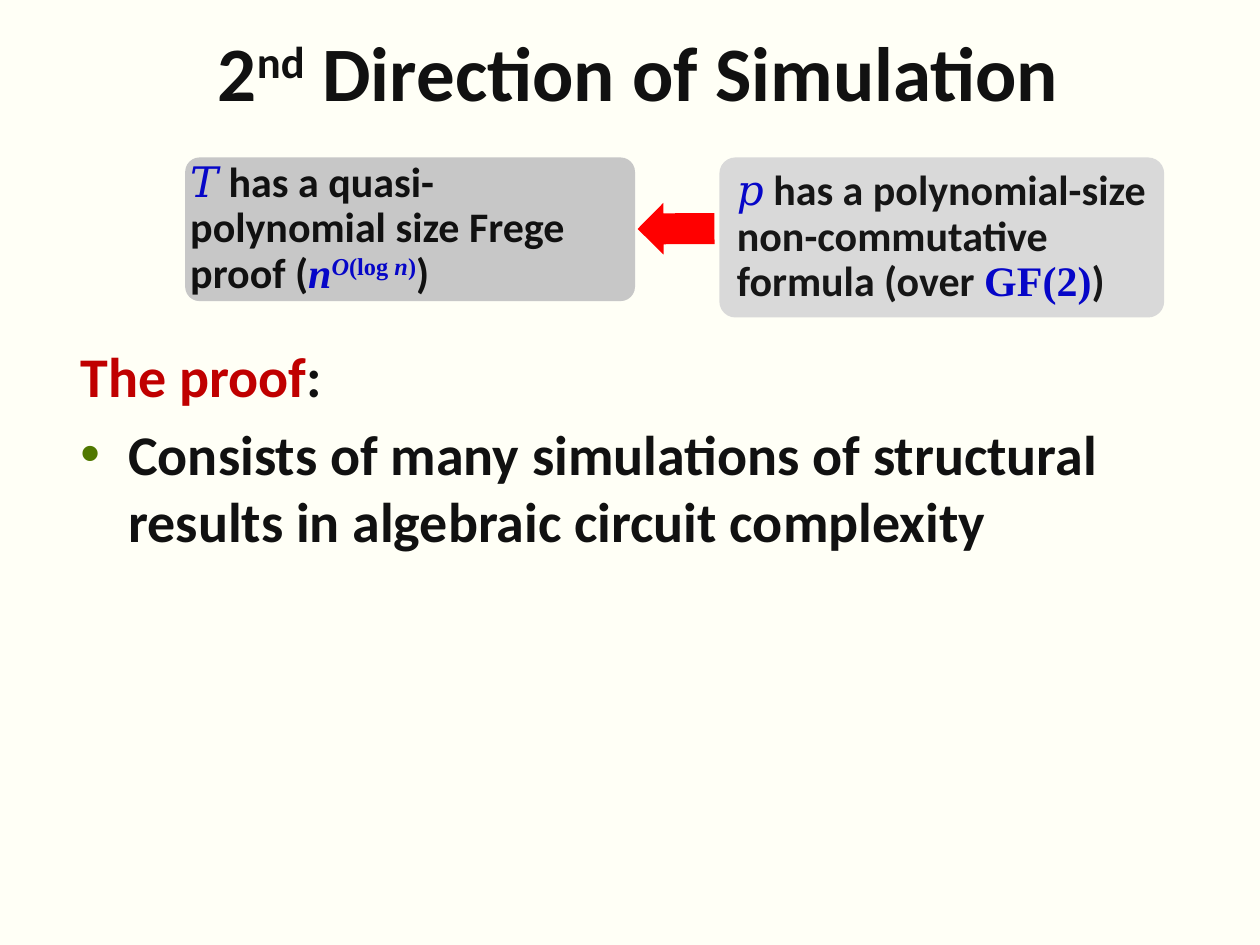
import pptx
import pptx.util
import pptx.dml.color
import pptx.enum.shapes
import pptx.enum.text
from lxml import etree

Inches = pptx.util.Inches
Pt = pptx.util.Pt
SHAPE = pptx.enum.shapes.MSO_SHAPE
ALIGN = pptx.enum.text.PP_ALIGN
ANCHOR = pptx.enum.text.MSO_ANCHOR

SANS, SERIF = "Calibri", "Times New Roman"
INK, BLUE, RED, SOFT = "111111", "0606C8", "C00000", "161616"

TITLE = [("2", SANS, INK, ""), ("nd", SANS, INK, "^"),
         (" Direction of Simulation", SANS, INK, "")]
PROOF = [("The proof", SANS, RED, ""), (":", SANS, INK, "")]
POINT = [("Consists of many simulations of structural results in "
          "algebraic circuit complexity", SANS, INK, "")]
FREGE = [("𝑇 ", SERIF, BLUE, ""),
         ("has a quasi-polynomial size Frege proof (", SANS, INK, ""),
         ("n", SERIF, BLUE, "i"), ("O", SERIF, BLUE, "i^"),
         ("(log", SERIF, BLUE, "^"), (" n", SERIF, BLUE, "i^"),
         (")", SERIF, BLUE, "^"), (")", SANS, INK, "")]
FORM = [("𝑝", SERIF, BLUE, ""),
        (" has a polynomial-size non-commutative formula (over ", SANS, SOFT, ""),
        ("GF(2)", SERIF, BLUE, ""), (")", SANS, SOFT, "")]
CARDS = [((1.47, 1.25, 3.57, 1.14), "C7C7C7", FREGE, 0),
         ((5.71, 1.25, 3.53, 1.27), "D9D9D9", FORM, 0.1)]
EDGE = 0.04


def color(code):
    return pptx.dml.color.RGBColor.from_string(code)


def write(para, runs, size):
    for text, face, code, style in runs:
        run = para.add_run()
        run.text = text
        font = run.font
        font.name, font.size, font.bold = face, Pt(size), True
        font.italic = "i" in style
        font.color.rgb = color(code)
        if "^" in style:
            run._r.get_or_add_rPr().set("baseline", "30000")


def add_text(slide, at, anchor, pad=(0.1, 0.05)):
    frame = slide.shapes.add_textbox(*map(Inches, at)).text_frame
    frame.word_wrap = True
    frame.vertical_anchor = anchor
    frame.margin_left = frame.margin_right = Inches(pad[0])
    frame.margin_top = frame.margin_bottom = Inches(pad[1])
    return frame


def add_block(slide, kind, at, fill, adjust):
    shape = slide.shapes.add_shape(kind, *map(Inches, at))
    shape.shadow.inherit = False
    shape.fill.solid()
    shape.fill.fore_color.rgb = color(fill)
    shape.line.fill.background()
    for i, value in enumerate(adjust):
        shape.adjustments[i] = value
    return shape


def add_bullet(para, mark, code):
    props = para._p.get_or_add_pPr()
    props.set("marL", str(Inches(0.38)))
    props.set("indent", str(Inches(-0.38)))
    tint = etree.SubElement(props, pptx.oxml.ns.qn("a:buClr"))
    etree.SubElement(tint, pptx.oxml.ns.qn("a:srgbClr"), val=code)
    etree.SubElement(props, pptx.oxml.ns.qn("a:buFont"), typeface="Arial")
    etree.SubElement(props, pptx.oxml.ns.qn("a:buChar"), char=mark)


def main():
    deck = pptx.Presentation()
    deck.slide_width, deck.slide_height = Inches(10), Inches(7.5)
    slide = deck.slides.add_slide(deck.slide_layouts[6])
    slide.background.fill.solid()
    slide.background.fill.fore_color.rgb = color("FFFFF6")

    head = add_text(slide, (0.29, 0.16, 9.56, 0.8), ANCHOR.MIDDLE).paragraphs[0]
    head.alignment = ALIGN.CENTER
    write(head, TITLE, 44)

    body = add_text(slide, (0.54, 2.66, 8.87, 3.46), ANCHOR.TOP)
    write(body.paragraphs[0], PROOF, 32)
    point = body.add_paragraph()
    add_bullet(point, "•", "507800")
    point.space_before = Pt(6.4)
    write(point, POINT, 32)

    for (x, y, w, h), fill, runs, pad in CARDS:
        add_block(slide, SHAPE.ROUNDED_RECTANGLE, (x, y, w, h), fill, [0.1])
        inner = (x + EDGE, y + EDGE, w - 2 * EDGE, h - 2 * EDGE)
        para = add_text(slide, inner, ANCHOR.MIDDLE, (pad, pad)).paragraphs[0]
        para.line_spacing = 0.9
        write(para, runs, 24)

    arrow = add_block(slide, SHAPE.RIGHT_ARROW, (5.06, 1.61, 0.61, 0.41),
                      "FF0000", [0.6, 0.5])
    arrow.rotation = 179.7

    deck.save("out.pptx")


if __name__ == "__main__":
    main()
